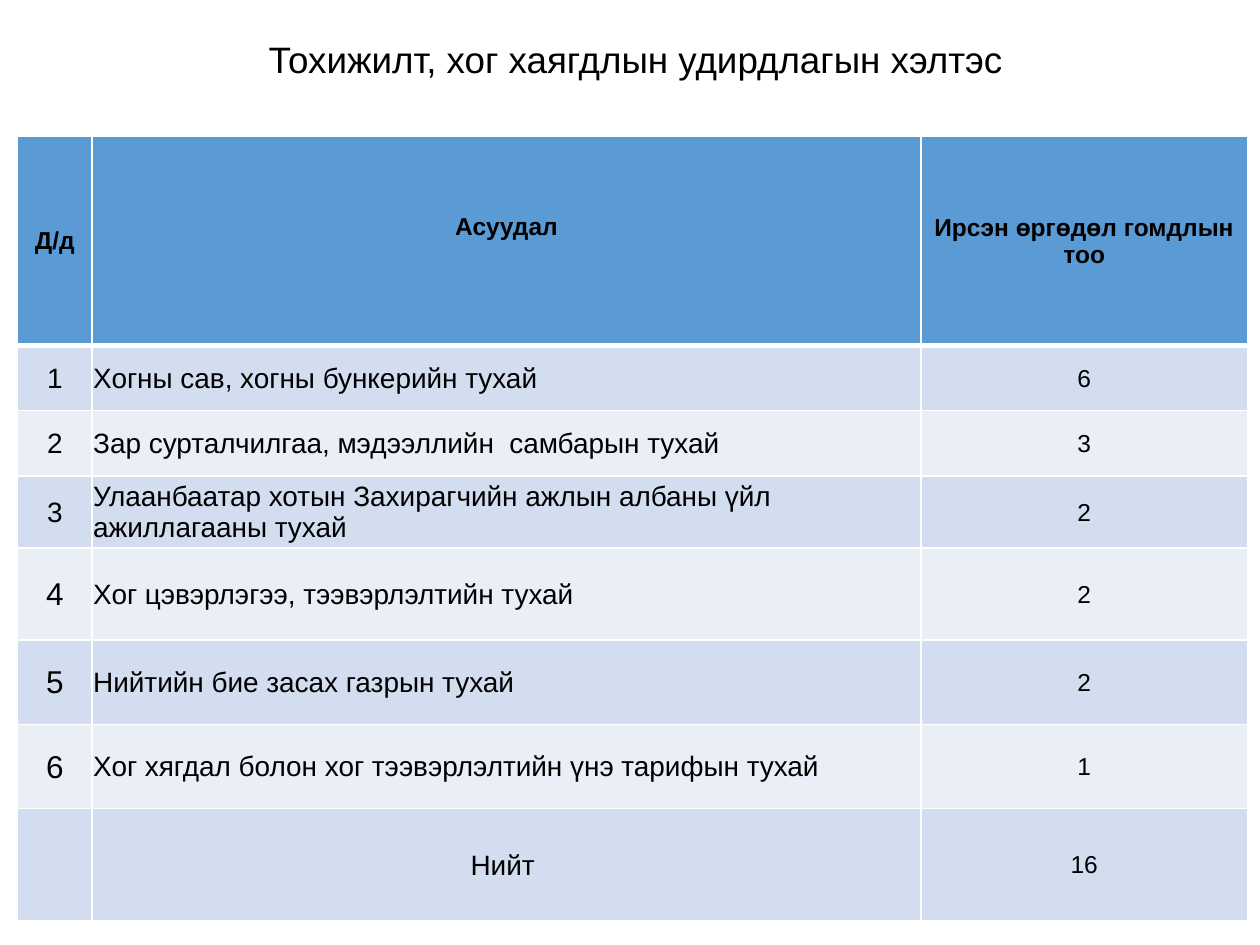
from lxml import etree
from pptx import Presentation
from pptx.dml.color import RGBColor
from pptx.enum.text import MSO_ANCHOR as Anchor, PP_ALIGN as Align
from pptx.oxml.ns import qn
from pptx.util import Inches, Pt

FONT = "Arial"
BLACK, WHITE, HEADER = "000000", "FFFFFF", "5B9BD5"
BANDS = ("D2DEEF", "EAEFF7")
COLUMN_WIDTHS = (0.59, 6.58, 2.59)
ROW_HEIGHTS = (1.66, 0.52, 0.52, 0.57, 0.73, 0.67, 0.67, 0.89)
HEADINGS = ("Д/д", "Асуудал", "Ирсэн өргөдөл гомдлын\nтоо")
# Issue, number of complaints, size of the row number
ISSUES = (
    ("Хогны сав, хогны бункерийн тухай", 6, 16),
    ("Зар сурталчилгаа, мэдээллийн  самбарын тухай", 3, 16),
    ("Улаанбаатар хотын Захирагчийн ажлын албаны үйл ажиллагааны тухай", 2, 16),
    ("Хог цэвэрлэгээ, тээвэрлэлтийн тухай", 2, 18),
    ("Нийтийн бие засах газрын тухай", 2, 18),
    ("Хог хягдал болон хог тээвэрлэлтийн үнэ тарифын тухай", 1, 18),
)


def color(value):
    return RGBColor.from_string(value)


def format_paragraph(paragraph, size, align, bold=False):
    paragraph.alignment = align
    font = paragraph.font
    font.name, font.size, font.bold = FONT, Pt(size), bold
    font.color.rgb = color(BLACK)


def set_borders(cell, bottom_width):
    """Insert white borders ahead of the cell's fill, as the schema requires."""
    properties = cell._tc.get_or_add_tcPr()
    widths = {"a:lnL": 1, "a:lnR": 1, "a:lnT": 1, "a:lnB": bottom_width}
    for index, (tag, width) in enumerate(widths.items()):
        line = etree.Element(qn(tag), w=str(Pt(width)))
        fill = etree.SubElement(line, qn("a:solidFill"))
        etree.SubElement(fill, qn("a:srgbClr"), val=WHITE)
        properties.insert(index, line)


def fill_cell(cell, text, size, background, align=Align.CENTER, bold=False, bottom_width=1):
    cell.text = text
    cell.vertical_anchor = Anchor.MIDDLE
    cell.margin_left = cell.margin_right = cell.margin_top = Inches(0.01)
    cell.margin_bottom = 0
    cell.fill.solid()
    cell.fill.fore_color.rgb = color(background)
    set_borders(cell, bottom_width)
    for paragraph in cell.text_frame.paragraphs:
        format_paragraph(paragraph, size, align, bold)


def add_title(slide, left, top, width, height):
    title = slide.shapes.title
    title.left, title.top, title.width, title.height = left, top, width, height
    frame = title.text_frame
    frame.text = "Тохижилт, хог хаягдлын удирдлагын хэлтэс"
    frame.vertical_anchor = Anchor.MIDDLE
    frame.margin_left = Inches(0.34)  # moves the centred text to the right
    paragraph = frame.paragraphs[0]
    format_paragraph(paragraph, 21, Align.CENTER)
    paragraph.line_spacing = 0.9


def add_complaints_table(slide, left, top, width, height):
    table = slide.shapes.add_table(
        len(ROW_HEIGHTS), len(COLUMN_WIDTHS), left, top, width, height).table
    for column, column_width in zip(table.columns, COLUMN_WIDTHS):
        column.width = Inches(column_width)
    for row, row_height in zip(table.rows, ROW_HEIGHTS):
        row.height = Inches(row_height)

    # Header row
    for column, heading in enumerate(HEADINGS):
        fill_cell(table.cell(0, column), heading, 14, HEADER, bold=True, bottom_width=3)
    table.cell(0, 1).margin_bottom = Inches(0.22)  # level with the first line beside it

    # Issues, then the total
    total = sum(count for _, count, _ in ISSUES)
    rows = [(str(number), issue, count, size, Align.LEFT)
            for number, (issue, count, size) in enumerate(ISSUES, 1)]
    rows.append(("", "Нийт ", total, 16, Align.CENTER))
    for row, (number, issue, count, size, align) in enumerate(rows, 1):
        band = BANDS[(row - 1) % 2]
        fill_cell(table.cell(row, 0), number, size, band)
        fill_cell(table.cell(row, 1), issue, 16, band, align)
        fill_cell(table.cell(row, 2), str(count), 14, band)


def main():
    presentation = Presentation()
    presentation.slide_width, presentation.slide_height = Inches(10), Inches(7.5)
    slide = presentation.slides.add_slide(presentation.slide_layouts[5])
    add_title(slide, Inches(0.14), Inches(0.19), Inches(9.57), Inches(0.59))
    add_complaints_table(slide, Inches(0.14), Inches(1.08), Inches(9.75), Inches(6.22))
    presentation.save("out.pptx")


if __name__ == "__main__":
    main()
